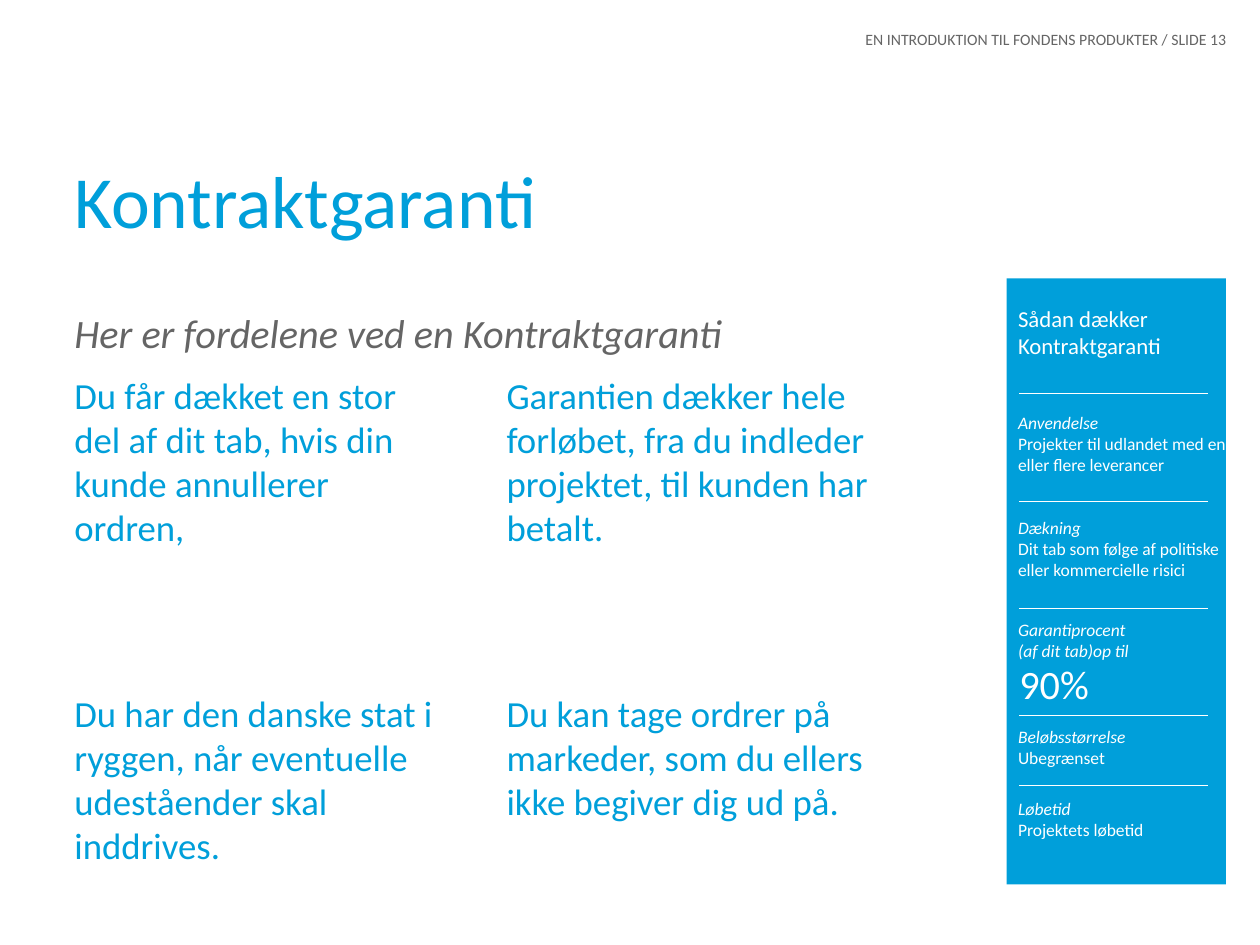
from dataclasses import dataclass
from lxml.etree import SubElement
from pptx import Presentation
from pptx.dml.color import RGBColor as RGB
from pptx.enum.shapes import MSO_CONNECTOR as CONNECTOR, MSO_SHAPE as SHAPE
from pptx.enum.text import MSO_ANCHOR as ANCHOR, MSO_AUTO_SIZE as AUTO, PP_ALIGN as ALIGN
from pptx.oxml.ns import qn
from pptx.util import Inches, Pt


@dataclass(frozen=True)
class Theme:
    font: str = "Calibri"
    blue: RGB = RGB(0x00, 0x9F, 0xDA)
    grey: RGB = RGB(0x65, 0x65, 0x65)
    white: RGB = RGB(0xFF, 0xFF, 0xFF)
    title: float = 42
    lead: float = 23
    benefit: float = 21
    panel_head: float = 13
    panel: float = 10
    header: float = 9


THEME = Theme()
LEFT, CONTENT_W = 0.59, 8.82
COLS, ROWS = (LEFT, 4.02), (2.96, 5.48)
PANEL = (7.99, 2.21, 1.74, 4.81)
PANEL_X, PANEL_W = 8.08, 1.65
RULE_X, RULE_W = 8.09, 1.5

BENEFITS = (
    ("Du får dækket en stor del af dit tab, hvis din kunde annullerer ordren,",
     "Garantien dækker hele forløbet, fra du indleder projektet, til kunden har betalt."),
    ("Du har den danske stat i ryggen, når eventuelle udeståender skal inddrives.",
     "Du kan tage ordrer på markeder, som du ellers ikke begiver dig ud på."),
)
SECTIONS = (
    (3.12, 3.27, 0.67, "Anvendelse\nProjekter til udlandet med en eller flere leverancer", 1),
    (3.98, 4.1, 0.67, "Dækning\nDit tab som følge af politiske eller kommercielle risici", 1),
    (4.83, 4.91, 0.34, "Garantiprocent\n(af dit tab)op til", 2),
    (5.68, 5.76, 0.34, "Beløbsstørrelse\nUbegrænset", 1),
    (6.23, 6.33, 0.34, "Løbetid\nProjektets løbetid", 1),
)


def place(sp, box):
    sp.left, sp.top, sp.width, sp.height = map(Inches, box)


def write(sp, text, size, color, italics=0, align=ALIGN.LEFT, anchor=ANCHOR.TOP):
    tf = sp.text_frame
    tf.text = text
    tf.word_wrap = True
    tf.auto_size = AUTO.NONE
    tf.vertical_anchor = anchor
    tf.margin_left = tf.margin_top = tf.margin_right = tf.margin_bottom = 0
    for i, p in enumerate(tf.paragraphs):
        p.alignment = align
        for r in p.runs:
            r.font.name = THEME.font
            r.font.size = Pt(size)
            r.font.color.rgb = color
            r.font.italic = i < italics


def add_text(s, box, *args, **style):
    write(s.shapes.add_textbox(*map(Inches, box)), *args, **style)


def add_title(s, text):
    sp = s.shapes.title
    place(sp, (LEFT, 0.69, CONTENT_W, 1.25))
    write(sp, text, THEME.title, THEME.blue, anchor=ANCHOR.BOTTOM)
    sp.text_frame.paragraphs[0].line_spacing = 0.9


def add_rule(s, y):
    line = s.shapes.add_connector(
        CONNECTOR.STRAIGHT, *map(Inches, (RULE_X, y, RULE_X + RULE_W, y)))
    line.line.color.rgb = THEME.white
    line.line.width = Pt(0.25)
    SubElement(line._element.spPr, qn("a:effectLst"))


def add_benefits(s):
    for y, row in zip(ROWS, BENEFITS):
        for x, text in zip(COLS, row):
            add_text(s, (x, y, 2.95, 1.77), text, THEME.benefit, THEME.blue)


def add_panel(s):
    sp = s.shapes.add_shape(SHAPE.RECTANGLE, *map(Inches, PANEL))
    sp.shadow.inherit = False
    sp.fill.solid()
    sp.fill.fore_color.rgb = THEME.blue
    sp.line.fill.background()
    add_text(s, (PANEL_X, 2.42, PANEL_W, 0.44), "Sådan dækker Kontraktgaranti",
             THEME.panel_head, THEME.white)
    for rule_y, y, h, text, italics in SECTIONS:
        add_rule(s, rule_y)
        add_text(s, (PANEL_X, y, PANEL_W, h), text, THEME.panel, THEME.white, italics=italics)
    add_text(s, (RULE_X, 5.23, PANEL_W, 0.39), "90%", THEME.lead, THEME.white)


def main():
    prs = Presentation()
    prs.slide_width, prs.slide_height = Inches(10), Inches(7.5)
    s = prs.slides.add_slide(prs.slide_layouts[5])
    add_text(s, (1.25, 0.24, 8.48, 0.14), "EN INTRODUKTION TIL FONDENS PRODUKTER / SLIDE 13",
             THEME.header, THEME.grey, align=ALIGN.RIGHT, anchor=ANCHOR.MIDDLE)
    add_title(s, "Kontraktgaranti")
    add_text(s, (LEFT, 2.45, CONTENT_W, 0.5), "Her er fordelene ved en Kontraktgaranti",
             THEME.lead, THEME.grey, italics=1)
    add_benefits(s)
    add_panel(s)
    prs.save("out.pptx")


if __name__ == "__main__":
    main()
